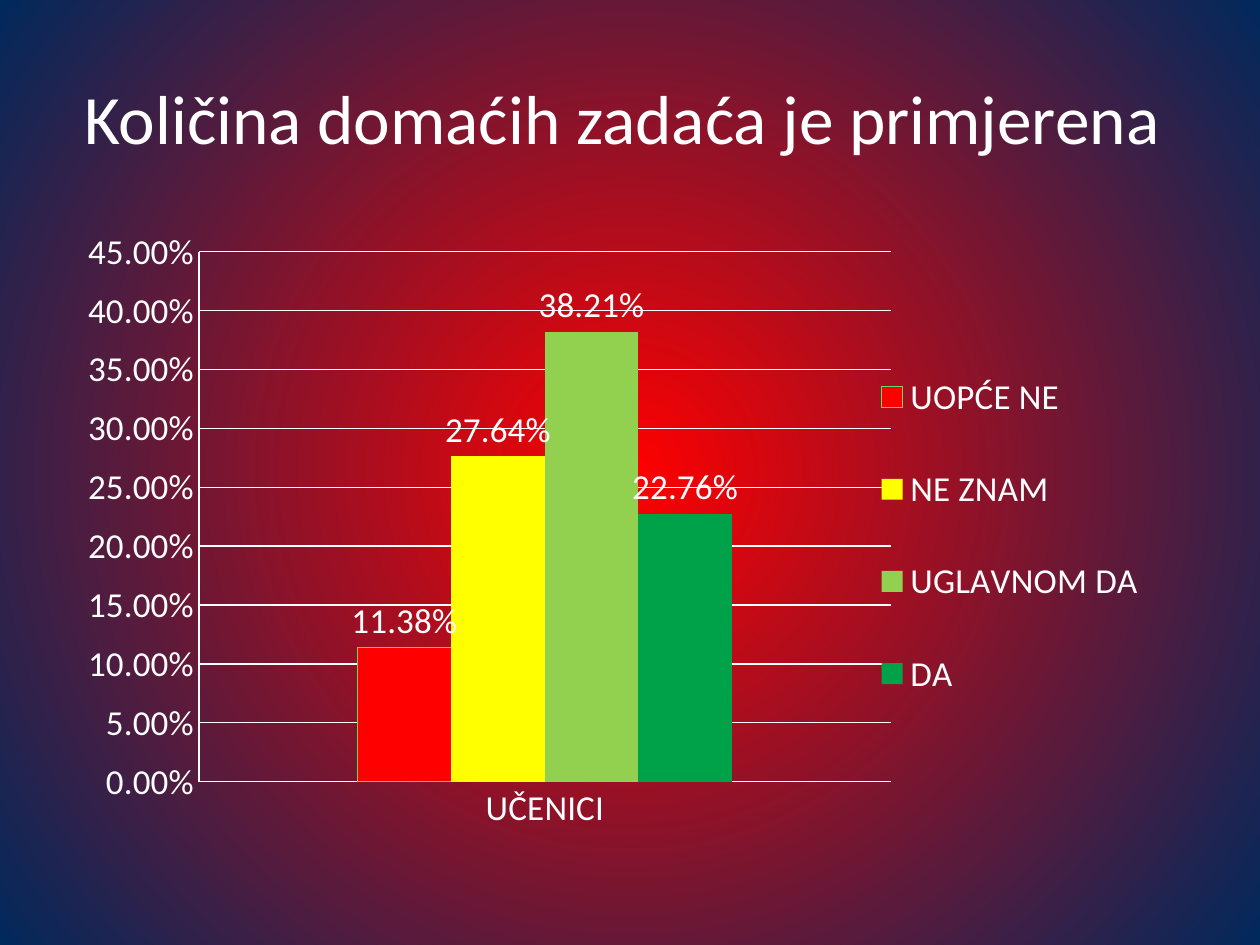
from lxml import etree
from pptx import Presentation
from pptx import util as u
from pptx.chart.data import CategoryChartData
from pptx.dml.color import RGBColor
from pptx.enum import chart as charts, text
from pptx.oxml import ns

COLORS = {
    "text": "FFFFFF",
    "glow": "FF0000",
    "edge": "00295C",
    "outline": "68D66B",
}
FONT = "Calibri"
PERCENT = "0.00%"
# Answer, share of pupils, column colour
ANSWERS = [
    ("UOPĆE NE", 0.1138, "FF0000"),
    ("NE ZNAM", 0.2764, "FFFF00"),
    ("UGLAVNOM DA", 0.3821, "92D050"),
    ("DA", 0.2276, "00A249"),
]


def rgb(value):
    return RGBColor.from_string(value)


def style_font(font, size):
    font.name = FONT
    font.size = u.Pt(size)
    font.color.rgb = rgb(COLORS["text"])


def style_line(line, color, width=0.75):
    line.color.rgb = rgb(color)
    line.width = u.Pt(width)


def place(item, left, top, width, height):
    item.left, item.top = u.Inches(left), u.Inches(top)
    item.width, item.height = u.Inches(width), u.Inches(height)


def set_background(slide):
    fill = slide.background.fill
    fill.gradient()
    for stop, name, position in zip(fill.gradient_stops, ("glow", "edge"), (0, 1)):
        stop.color.rgb = rgb(COLORS[name])
        stop.position = position
    # Turn the linear gradient into a radial one
    gradient = slide.element.find(".//" + ns.qn("a:gradFill"))
    linear = gradient.find(ns.qn("a:lin"))
    radial = etree.Element(ns.qn("a:path"), path="circle")
    etree.SubElement(radial, ns.qn("a:fillToRect"),
                     {side: "50000" for side in "ltrb"})
    gradient.replace(linear, radial)


def add_title(slide, wording):
    title = slide.shapes.title
    place(title, 0.5, 0.3, 9, 1.25)
    frame = title.text_frame
    frame.text = wording
    frame.auto_size = text.MSO_AUTO_SIZE.NONE
    frame.vertical_anchor = text.MSO_ANCHOR.MIDDLE
    para = frame.paragraphs[0]
    para.alignment = text.PP_ALIGN.CENTER
    style_font(para.runs[0].font, 39.6)


def set_layout(region, before, left, top, width, height, inner=False):
    """Give a chart region a fixed place, as fractions of the chart."""
    for old in region.findall(ns.qn("c:layout")):
        region.remove(old)
    layout = etree.Element(ns.qn("c:layout"))
    manual = etree.SubElement(layout, ns.qn("c:manualLayout"))
    settings = [("layoutTarget", "inner")] if inner else []
    settings += [("xMode", "edge"), ("yMode", "edge"),
                 ("x", left), ("y", top), ("w", width), ("h", height)]
    for tag, value in settings:
        etree.SubElement(manual, ns.qn("c:" + tag), val=str(value))
    region.find(ns.qn("c:" + before)).addprevious(layout)


def style_axis(axis):
    axis.major_tick_mark = charts.XL_TICK_MARK.NONE
    axis.minor_tick_mark = charts.XL_TICK_MARK.NONE
    style_font(axis.tick_labels.font, 20)
    style_line(axis.format.line, COLORS["text"])


def style_series(series, color):
    series.invert_if_negative = False
    series.format.fill.solid()
    series.format.fill.fore_color.rgb = rgb(color)
    labels = series.data_labels
    labels.show_value = True
    labels.number_format = PERCENT
    labels.number_format_is_linked = False
    labels.position = charts.XL_LABEL_POSITION.OUTSIDE_END
    style_font(labels.font, 20)


def add_answer_chart(slide):
    data = CategoryChartData(number_format=PERCENT)
    data.categories = ["UČENICI"]
    for name, share, _ in ANSWERS:
        data.add_series(name, [share])
    chart = slide.shapes.add_chart(
        charts.XL_CHART_TYPE.COLUMN_CLUSTERED, u.Inches(0.5), u.Inches(1.75),
        u.Inches(9), u.Inches(4.95), data).chart
    style_font(chart.font, 10)
    chart.has_title = False

    # Columns
    plot = chart.plots[0]
    plot.gap_width = 339
    plot.overlap = 0
    plot.vary_by_categories = False
    for series, (_, _, color) in zip(plot.series, ANSWERS):
        style_series(series, color)
    style_line(plot.series[0].format.line, COLORS["outline"])

    # Axes
    style_axis(chart.category_axis)
    values = chart.value_axis
    style_axis(values)
    values.minimum_scale, values.maximum_scale = 0, 0.45
    values.major_unit = 0.05
    values.tick_labels.number_format = PERCENT
    values.tick_labels.number_format_is_linked = False
    values.has_major_gridlines = True
    style_line(values.major_gridlines.format.line, COLORS["text"])

    # Legend, slightly over the right end of the plot
    chart.has_legend = True
    chart.legend.position = charts.XL_LEGEND_POSITION.RIGHT
    chart.legend.include_in_layout = False
    style_font(chart.legend.font, 20)
    area = chart.element.find(".//" + ns.qn("c:plotArea"))
    legend = chart.element.find(".//" + ns.qn("c:legend"))
    set_layout(area, "barChart", 0.12, 0.05, 0.61, 0.85, inner=True)
    set_layout(legend, "overlay", 0.68, 0.17, 0.31, 0.67)


def main():
    deck = Presentation()
    deck.slide_width, deck.slide_height = u.Inches(10), u.Inches(7.5)
    slide = deck.slides.add_slide(deck.slide_layouts.get_by_name("Title Only"))
    set_background(slide)
    add_title(slide, "Količina domaćih zadaća je primjerena ")
    add_answer_chart(slide)
    deck.save("out.pptx")


if __name__ == "__main__":
    main()
